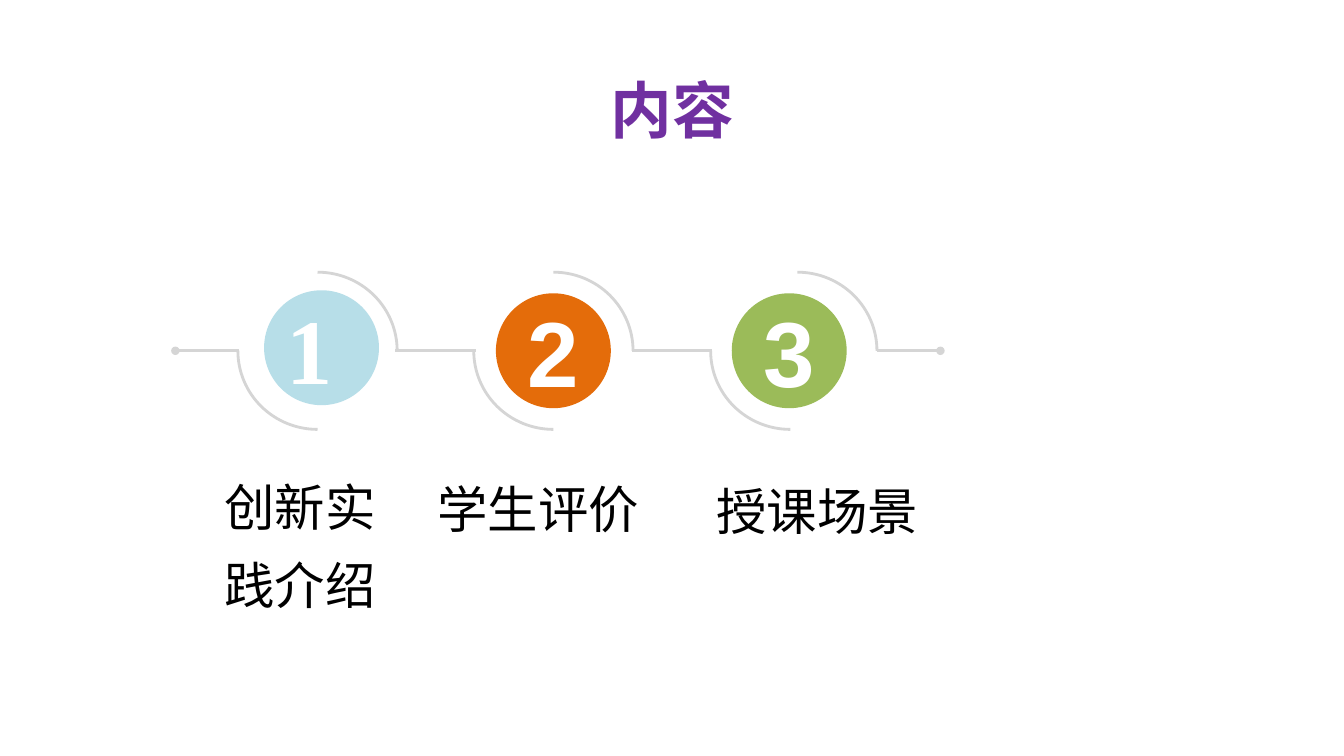
import math
from pptx import Presentation
from pptx import util as u
from pptx.dml.color import RGBColor
from pptx.enum import shapes, text
from lxml import etree
from pptx.oxml import ns

PX = 9144  # EMU per px, 100 px to the inch
PURPLE = RGBColor(0x70, 0x30, 0xA0)
BLACK = RGBColor(0, 0, 0)
WHITE = RGBColor(0xFF, 0xFF, 0xFF)
GREY = RGBColor(0xD5, 0xD5, 0xD5)
BLUE = RGBColor(0xB7, 0xDE, 0xE8)
ORANGE = RGBColor(0xE4, 0x6C, 0x0A)
GREEN = RGBColor(0x9B, 0xBB, 0x59)

AXIS_Y = 348
ARC_WIDTH, ARC_HEIGHT = 79, 78

# Quarter of a unit circle as two Bezier curves: start, then three points each
DIAGONAL = math.sqrt(0.5)
HANDLE = 4 / 3 * math.tan(math.pi / 16)
NEAR, FAR = DIAGONAL * (1 - HANDLE), DIAGONAL * (1 + HANDLE)
QUARTER = ((1, 0), (1, HANDLE), (FAR, NEAR), (DIAGONAL, DIAGONAL),
           (NEAR, FAR), (HANDLE, 1), (0, 1))


def write(shape, words, size, color, font="Times New Roman", bold=False,
          align=None, spacing=None, anchor=text.MSO_ANCHOR.TOP):
    frame = shape.text_frame
    frame.word_wrap = True
    frame.auto_size = text.MSO_AUTO_SIZE.NONE
    frame.vertical_anchor = anchor
    paragraph = frame.paragraphs[0]
    paragraph.alignment = align
    paragraph.line_spacing = spacing
    run = paragraph.add_run()
    run.text = words
    run.font.size = u.Pt(size)
    run.font.name = font
    run.font.bold = bold
    run.font.color.rgb = color


presentation = Presentation()
presentation.slide_width = u.Inches(40 / 3)
presentation.slide_height = 750 * PX
slide = presentation.slides.add_slide(presentation.slide_layouts[5])

# Title
title = slide.shapes.title
title.left, title.top, title.width, title.height = [v * PX for v in (92, 40, 1150, 145)]
write(title, "内容", 44, PURPLE, bold=True, align=text.PP_ALIGN.CENTER,
      spacing=0.9, anchor=text.MSO_ANCHOR.MIDDLE)

# Labels under the steps
for label, left, top, width in (("创新实践介绍", 213, 449, 204),
                                ("学生评价", 424, 451, 259),
                                ("授课场景", 701, 453, 259)):
    box = slide.shapes.add_textbox(left * PX, top * PX, width * PX, 179 * PX)
    write(box, label, 36, BLACK, spacing=1.3)

# Numbered circles, each with an upper right and a lower left arc
for number, font, color, left, top, upper_x, lower_x in (
        ("1 ", "Times New Roman", BLUE, 262, 288, 315, 315),
        ("2", "Arial", ORANGE, 492, 291, 549, 549),
        ("3", "Arial", GREEN, 726, 291, 791, 784)):
    circle = slide.shapes.add_shape(shapes.MSO_SHAPE.OVAL, left * PX, top * PX,
                                    114 * PX, 114 * PX)
    circle.shadow.inherit = False
    circle.fill.solid()
    circle.fill.fore_color.rgb = color
    circle.line.fill.background()
    frame = circle.text_frame
    frame.margin_left = frame.margin_top = frame.margin_right = frame.margin_bottom = 0
    write(circle, number, 66, WHITE, font=font, bold=True,
          align=text.PP_ALIGN.CENTER, anchor=text.MSO_ANCHOR.MIDDLE)

    for center_x, side in ((upper_x, 1), (lower_x, -1)):
        points = [(round((center_x + side * ARC_WIDTH * x) * PX),
                   round((AXIS_Y - side * ARC_HEIGHT * y) * PX)) for x, y in QUARTER]
        builder = slide.shapes.build_freeform(*points[0])
        builder.add_line_segments(points[1:], close=False)
        arc = builder.convert_to_shape()
        arc.shadow.inherit = False
        arc.fill.background()
        arc.line.color.rgb = GREY
        arc.line.width = u.Pt(2)
        # Gather every three segments into one curve
        outline = arc._element.find(".//" + ns.qn("a:path"))
        segments = outline.findall(ns.qn("a:lnTo"))
        for first in range(0, len(segments), 3):
            curve = etree.SubElement(outline, ns.qn("a:cubicBezTo"))
            for segment in segments[first:first + 3]:
                curve.append(segment[0])
                outline.remove(segment)

# Straight links along the axis, with dots at the outer ends
for start, end, dot in ((174, 237, "headEnd"), (870, 933, "tailEnd"),
                        (392, 472, None), (627, 706, None)):
    link = slide.shapes.add_connector(shapes.MSO_CONNECTOR.STRAIGHT, start * PX,
                                      AXIS_Y * PX, end * PX, AXIS_Y * PX)
    link.line.color.rgb = GREY
    link.line.width = u.Pt(2)
    if dot:
        etree.SubElement(link.line._get_or_add_ln(), ns.qn("a:" + dot), type="oval")
    etree.SubElement(link._element.spPr, ns.qn("a:effectLst"))

presentation.save("out.pptx")
